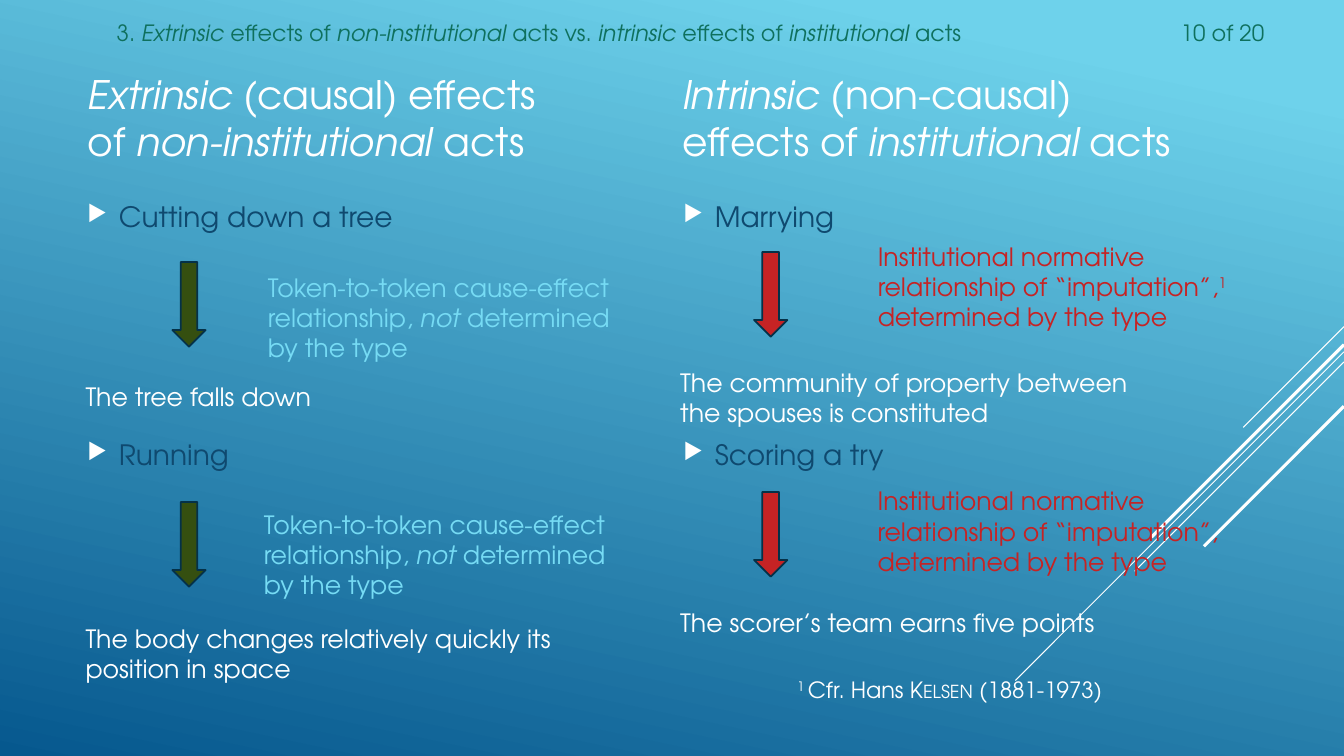
"""Build the slide on extrinsic and intrinsic effects of acts."""
import pptx
import pptx.dml.color
import pptx.enum.shapes
import pptx.enum.text
import pptx.util
import lxml.etree

Pt = pptx.util.Pt
FONT = "TeX Gyre Adventor"
WHITE, NAVY, GREEN, RED, SKY = "FFFFFF", "0F496F", "0F705D", "C62324", "76DBF4"
ANCHOR = pptx.enum.text.MSO_ANCHOR
ALIGN = pptx.enum.text.PP_ALIGN
MARKS = {"^": ("baseline", "30000"), "~": ("cap", "small"), "_": ("i", "1")}


def rgb(code):
    return pptx.dml.color.RGBColor.from_string(code)


def write(text, left, top, width, height, size=18, color=WHITE,
          anchor=ANCHOR.TOP, align=ALIGN.LEFT, bullet=False):
    """Add a text box; | parts runs, _ is italic, ^ is raised, ~ is small caps."""
    box = slide.shapes.add_textbox(Pt(left), Pt(top), Pt(width), Pt(height))
    frame = box.text_frame
    frame.word_wrap = True
    frame.vertical_anchor = anchor
    para = frame.paragraphs[0]
    para.alignment = align
    for part in text.split("|"):
        if part == "\n":
            para.add_line_break()
            continue
        run = para.add_run()
        run.text = part.lstrip("_^~")
        run.font.name = FONT
        run.font.size = Pt(size)
        run.font.color.rgb = rgb(color)
        if part[0] in MARKS:
            run.font._element.set(*MARKS[part[0]])
    if bullet:
        props = para._p.get_or_add_pPr()
        props.set("marL", str(Pt(22.5)))
        props.set("indent", str(-Pt(22.5)))
        space = "{http://schemas.openxmlformats.org/drawingml/2006/main}"
        tint = lxml.etree.SubElement(props, space + "buClr")
        lxml.etree.SubElement(tint, space + "srgbClr", val=WHITE)
        lxml.etree.SubElement(props, space + "buSzPct", val="80000")
        lxml.etree.SubElement(props, space + "buChar", char="▶")


deck = pptx.Presentation()
deck.slide_width, deck.slide_height = Pt(960), Pt(540)
slide = deck.slides.add_slide(deck.slide_layouts[6])

fill = slide.background.fill
fill.gradient()
fill.gradient_angle = 258
for stop, (place, code) in zip(fill.gradient_stops, [(0.1, "6ED2EB"), (1, "06588E")]):
    stop.position = place
    stop.color.rgb = rgb(code)

for start, drop, weight in [(233.3, 72, 0.75), (251.3, 234.7, 0.75), (258.5, 149.5, 0.75),
                            (246.2, 137.5, 2.25), (290.2, 100, 2.25)]:
    line = slide.shapes.add_connector(
        pptx.enum.shapes.MSO_CONNECTOR.STRAIGHT,
        Pt(960), Pt(start), Pt(960 - drop), Pt(start + drop))
    line.line.color.rgb = rgb(WHITE)
    line.line.width = Pt(weight)
    lxml.etree.SubElement(
        line._element.spPr,
        "{http://schemas.openxmlformats.org/drawingml/2006/main}effectLst")

write("3. |_Extrinsic |effects of |_non-institutional |acts vs. |_intrinsic |"
      "effects of |_institutional| acts", 76.3, 10.1, 700, 26.6, size=16, color=GREEN)
write("10 of 20", 796.3, 10.1, 113.8, 26.6, size=16, color=GREEN, align=ALIGN.RIGHT)

write("_Extrinsic| (causal) effects of |_non-institutional| acts",
      55.4, 48.2, 366.5, 72.7, size=28, anchor=ANCHOR.BOTTOM)
write("_Intrinsic| (non-causal) effects of |_institutional| acts",
      480.2, 48.2, 367.2, 72.7, size=28, anchor=ANCHOR.BOTTOM)

for act, left, top in [("Cutting down a tree", 55.4, 139), ("Running", 55.4, 309),
                       ("Marrying", 481, 139), ("Scoring a try", 481, 309)]:
    write(act, left, top, 388, 32, size=20, color=NAVY, bullet=True)

for effect, left, top in [
        ("The tree falls down", 54, 268.6),
        ("The body changes relatively quickly its position in space", 54, 441.5),
        ("The community of property between the spouses is constituted", 478.8, 258.5),
        ("The scorer’s team earns five points", 478.8, 430)]:
    write(effect, left, top, 360.7, 50)

for left, top, code in [(123.1, 187.2, "354F10"), (123.1, 358.6, "354F10"),
                        (538.6, 180, RED), (538.6, 351.4, RED)]:
    arrow = slide.shapes.add_shape(
        pptx.enum.shapes.MSO_SHAPE.DOWN_ARROW, Pt(left), Pt(top), Pt(23.8), Pt(60.5))
    arrow.shadow.inherit = False
    arrow.fill.solid()
    arrow.fill.fore_color.rgb = rgb(code)
    arrow.line.color.rgb = rgb("043148")
    arrow.line.width = Pt(1.25)

cause = "Token-to-token cause-effect relationship, |_not| determined by the type"
norm = "Institutional normative relationship of “imputation”,"
rule = "|\n|determined by the type"
for text, left, top, width, color in [
        (cause, 184.3, 190.8, 260, SKY), (cause, 181.4, 360, 260, SKY),
        (norm + "|^1" + rule, 619.9, 168.5, 286.6, RED),
        (norm + rule, 619.9, 343.4, 260, RED)]:
    write(text, left, top, width, 72.7, color=color)

write("^1 |Cfr. Hans |~Kelsen| (1881-1973)", 562.3, 479.5, 264.2, 26.6, size=16)

deck.save("out.pptx")
